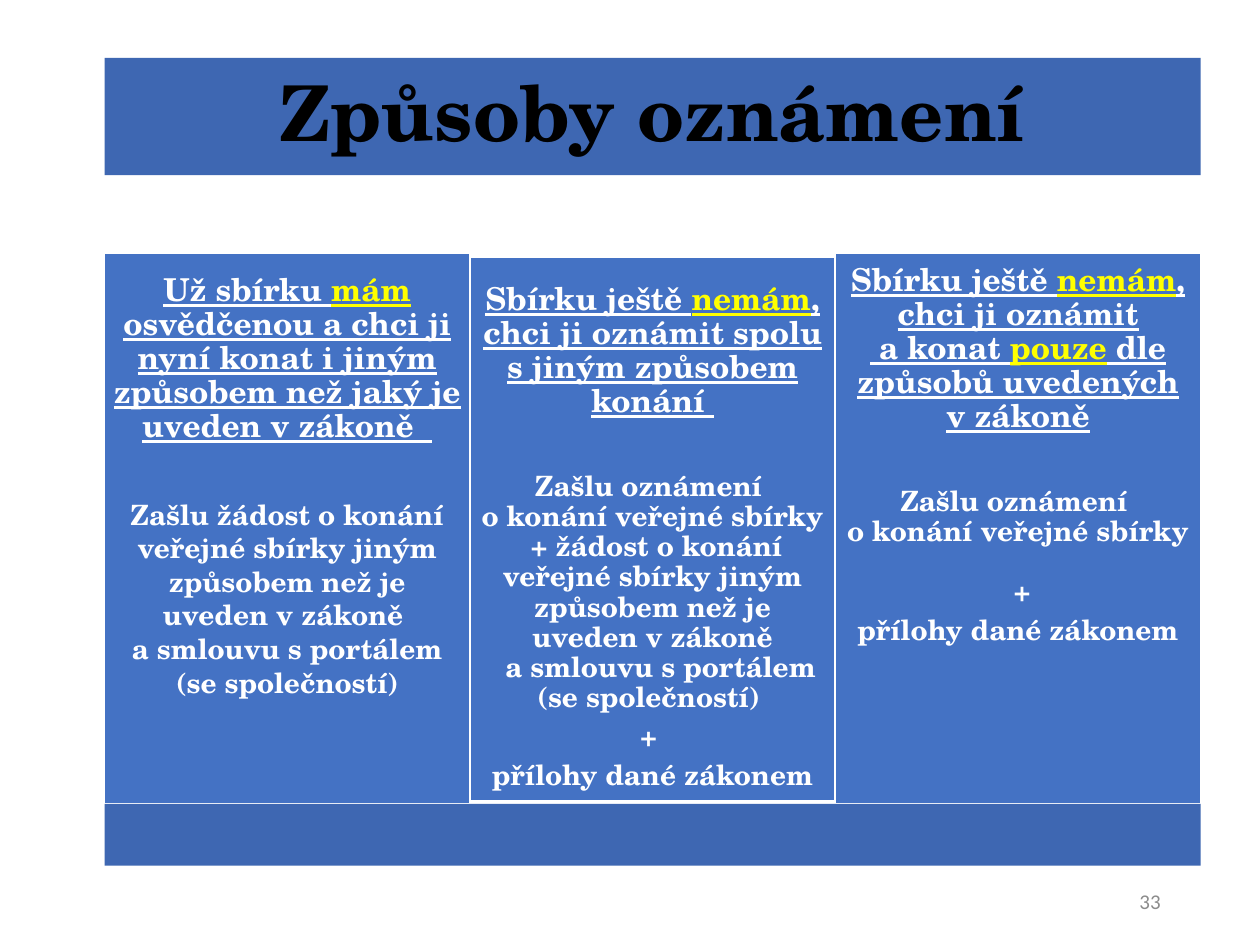
from dataclasses import dataclass

from pptx import Presentation
from pptx.dml.color import RGBColor
from pptx.enum.shapes import MSO_SHAPE
from pptx.enum.text import MSO_ANCHOR, PP_ALIGN
from pptx.util import Inches, Pt

RECT = MSO_SHAPE.RECTANGLE
TOP, MIDDLE = MSO_ANCHOR.TOP, MSO_ANCHOR.MIDDLE
CENTER, RIGHT = PP_ALIGN.CENTER, PP_ALIGN.RIGHT


@dataclass(frozen=True)
class Theme:
    band: str = "3E67B2"
    card: str = "4472C4"
    white: str = "FFFFFF"
    black: str = "000000"
    mark: str = "FFFF00"
    gray: str = "8C8C8C"
    serif: str = "TeX Gyre Schola"
    sans: str = "Calibri"
    title: int = 44
    head: int = 18
    body: int = 16
    small: int = 12


THEME = Theme()
LEFT, WIDTH = 0.83, 8.7
CARD_W = WIDTH / 3

# Each card: top, height, top inset, heading, body line spacing,
# body paragraphs as (text, space before). Asterisks mark yellow words.
CARDS = [
    (2.01, 4.37, 0.17,
     "Už sbírku *mám* osvědčenou a chci ji nyní konat i jiným "
     "způsobem než jaký je uveden v zákoně  ", 1.0,
     [("Zašlu žádost o konání veřejné sbírky jiným způsobem než je\n"
       "uveden v zákoně \na smlouvu s portálem (se společností)", 0)]),
    (2.04, 4.32, 0.21,
     "Sbírku ještě *nemám*, chci ji oznámit spolu\ns jiným způsobem konání ", 0.9,
     [("Zašlu oznámení \no konání veřejné sbírky\n + žádost o konání "
       "veřejné sbírky jiným způsobem než je\nuveden v zákoně\n"
       "  a smlouvu s portálem (se společností) ", 0),
      ("+ ", 5), ("přílohy dané zákonem", 5)]),
    (2.01, 4.37, 0.09,
     "Sbírku ještě *nemám*, chci ji oznámit\n a konat *pouze* dle "
     "způsobů uvedených\nv zákoně", 0.9,
     [("Zašlu oznámení \no konání veřejné sbírky", 0),
      (" +", 17), ("přílohy dané zákonem", 5)]),
]


def rgb(code):
    return RGBColor.from_string(code)


def add_box(slide, left, top, width, height, fill, line=None):
    box = slide.shapes.add_shape(
        RECT, Inches(left), Inches(top), Inches(width), Inches(height))
    box.shadow.inherit = False
    box.fill.solid()
    box.fill.fore_color.rgb = rgb(fill)
    if line:
        box.line.color.rgb = rgb(line)
        box.line.width = Pt(1)
    else:
        box.line.fill.background()
    return box


def set_frame(shape, anchor, inset, top=None):
    frame = shape.text_frame
    frame.word_wrap = True
    frame.vertical_anchor = anchor
    frame.margin_left = frame.margin_right = frame.margin_bottom = Inches(inset)
    frame.margin_top = Inches(inset if top is None else top)
    return frame


def style(para, size, color, face=THEME.serif, bold=True, align=CENTER):
    para.alignment = align
    font = para.font
    font.size, font.name, font.bold = Pt(size), face, bold
    font.color.rgb = rgb(color)


def write(para, text):
    """Add runs and line breaks; words between asterisks turn yellow."""
    for i, part in enumerate(text.split("*")):
        for j, line in enumerate(part.split("\n")):
            if j:
                para.add_line_break()
            if line:
                run = para.add_run()
                run.text = line
                if i % 2:
                    run.font.color.rgb = rgb(THEME.mark)


def add_title(slide, text):
    box = add_box(slide, LEFT, 0.46, WIDTH, 0.93, THEME.band)
    para = set_frame(box, MIDDLE, 0.18).paragraphs[0]
    para.text = text
    para.line_spacing = 0.9
    style(para, THEME.title, THEME.black)


def add_card(slide, index, card):
    top, height, inset, head, spacing, body = card
    box = add_box(slide, LEFT + index * CARD_W, top, CARD_W, height,
                  THEME.card, THEME.white)
    frame = set_frame(box, TOP, 0.07, inset)
    para = frame.paragraphs[0]
    style(para, THEME.head, THEME.white)
    para.font.underline = True
    para.line_spacing = 0.9
    para.space_after = Pt(30)
    write(para, head)
    for text, before in body:
        para = frame.add_paragraph()
        style(para, THEME.body, THEME.white)
        para.line_spacing = spacing
        para.space_before = Pt(before)
        write(para, text)


def add_number(slide, text):
    box = slide.shapes.add_textbox(
        Inches(7.06), Inches(6.95), Inches(2.25), Inches(0.4))
    para = set_frame(box, MIDDLE, 0.1, 0.1).paragraphs[0]
    para.text = text
    style(para, THEME.small, THEME.gray, THEME.sans, False, RIGHT)


def main():
    deck = Presentation()
    deck.slide_width, deck.slide_height = Inches(10), Inches(7.5)
    slide = deck.slides.add_slide(deck.slide_layouts[6])
    add_title(slide, "Způsoby oznámení")
    for index, card in enumerate(CARDS):
        add_card(slide, index, card)
    add_box(slide, LEFT, 6.38, WIDTH, 0.49, THEME.band)
    add_number(slide, "33")
    deck.save("out.pptx")


if __name__ == "__main__":
    main()
